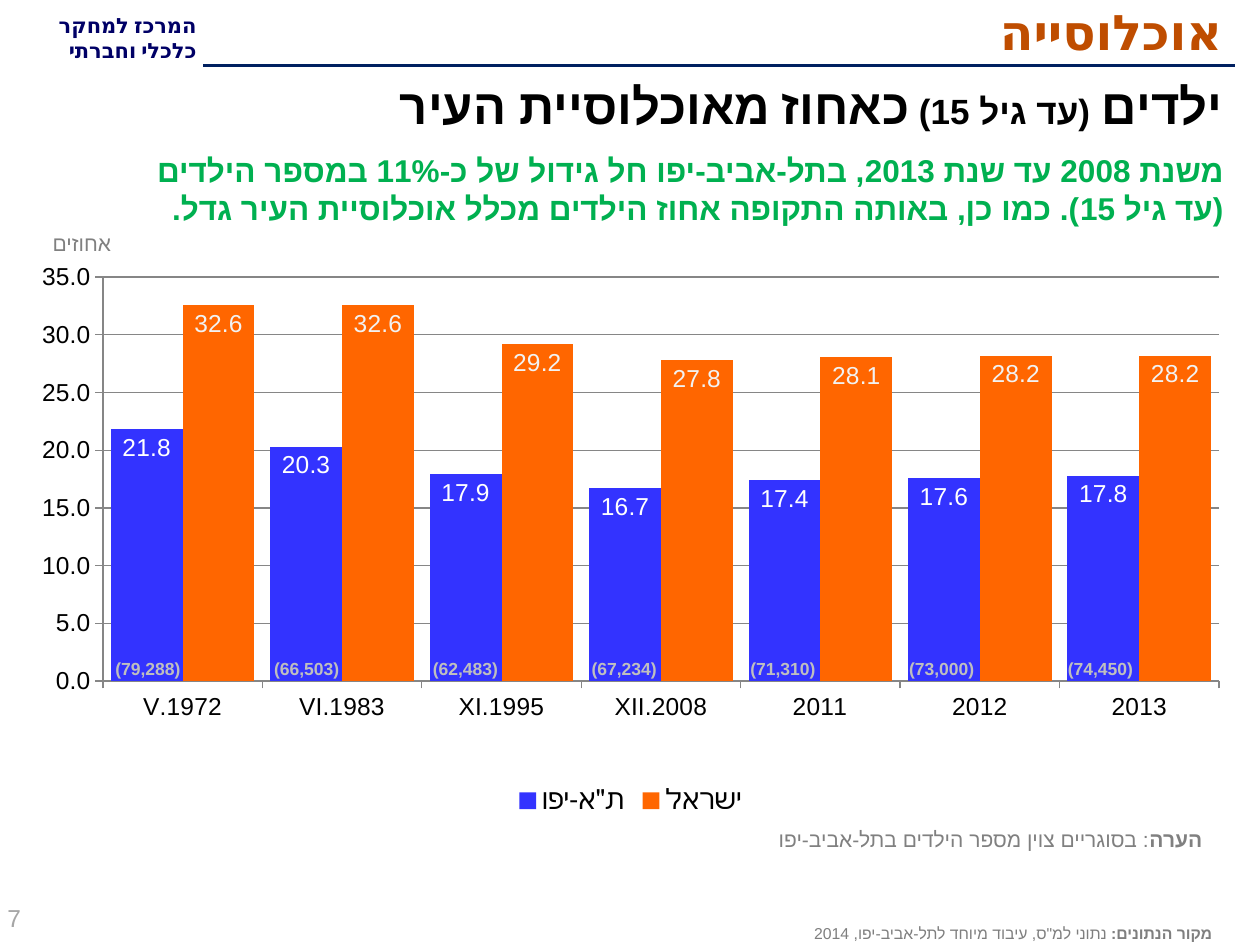
import pptx
import pptx.chart.data
import pptx.dml.color
import pptx.enum.chart
import pptx.enum.lang
import pptx.enum.shapes
import pptx.enum.text
import pptx.oxml
import pptx.oxml.ns
import pptx.util
from pptx.util import Inches

COLORS = {
    "title": "BF4D00", "organization": "000066", "rule": "002060",
    "heading": "000000", "claim": "00B050", "note": "808080",
    "source": "7F7F7F", "page": "A6A6A6", "count": "BFBFBF",
    "city": "3333FF", "city_label": "FFFFFF",
    "country": "FF6600", "country_label": "F2F2F2", "grid": "868686",
}
ALIGN = pptx.enum.text.PP_ALIGN
ANCHOR = pptx.enum.text.MSO_ANCHOR

PERIODS = ["V.1972", "VI.1983", "XI.1995", "XII.2008", "2011", "2012", "2013"]
CITY_SHARE = [21.8, 20.3, 17.9, 16.7, 17.4, 17.6, 17.8]
COUNTRY_SHARE = [32.6, 32.6, 29.2, 27.8, 28.1, 28.2, 28.2]
CHILD_COUNTS = ["(79,288)", "(66,503)", "(62,483)", "(67,234)",
                "(71,310)", "(73,000)", "(74,450)"]


def rgb(name):
    return pptx.dml.color.RGBColor.from_string(COLORS[name])


def write(shape, lines, color, font="Arial", align=ALIGN.RIGHT, anchor=ANCHOR.TOP):
    """Fill a shape with right-to-left lines, each a list of (text, size, bold)."""
    frame = shape.text_frame
    frame.word_wrap = True
    frame.auto_size = pptx.enum.text.MSO_AUTO_SIZE.NONE
    frame.vertical_anchor = anchor
    for number, pieces in enumerate(lines):
        paragraph = frame.add_paragraph() if number else frame.paragraphs[0]
        paragraph.alignment = align
        paragraph.space_before = pptx.util.Pt(0)
        properties = paragraph._p.get_or_add_pPr()
        for key, value in (("rtl", "1"), ("marL", "0"), ("marR", "0"), ("indent", "0")):
            properties.set(key, value)
        properties.append(pptx.oxml.parse_xml(
            f'<a:buNone {pptx.oxml.ns.nsdecls("a")}/>'))
        for text, size, bold in pieces:
            run = paragraph.add_run()
            run.text = text
            run.font.size = pptx.util.Pt(size)
            run.font.bold = bold
            run.font.name = font
            run.font.language_id = pptx.enum.lang.MSO_LANGUAGE_ID.HEBREW
            run.font.color.rgb = rgb(color)
            run._r.get_or_add_rPr().append(pptx.oxml.parse_xml(
                f'<a:cs {pptx.oxml.ns.nsdecls("a")} typeface="{font}"/>'))


def place(shape, left, top, width, height):
    shape.left, shape.top, shape.width, shape.height = left, top, width, height
    return shape


def build_header(slide, left, top, width):
    organization = slide.shapes.add_textbox(
        left - Inches(0.15), top + Inches(0.05), Inches(1.81), Inches(0.51))
    write(organization, [[("המרכז למחקר", 12, True)], [("כלכלי וחברתי", 12, True)]],
          "organization", "Roboto")

    rule_y = top + Inches(0.52)
    rule = slide.shapes.add_connector(
        pptx.enum.shapes.MSO_CONNECTOR.STRAIGHT,
        left + width, rule_y, left + Inches(1.61), rule_y)
    rule.line.color.rgb = rgb("rule")
    rule.line.width = pptx.util.Pt(2.25)
    rule._element.spPr.append(pptx.oxml.parse_xml(
        f'<a:effectLst {pptx.oxml.ns.nsdecls("a")}/>'))

    title = place(slide.shapes.title, left + Inches(1.58), top - Inches(0.03),
                  width - Inches(1.58), Inches(0.55))
    write(title, [[("אוכלוסייה", 28, True)]], "title", "Roboto", anchor=ANCHOR.MIDDLE)


def build_message(slide, left, top, width):
    heading = place(slide.placeholders[1], left, top, width, Inches(0.6))
    write(heading, [[("ילדים", 28, True), (" ", 24, True), ("(עד גיל 15) ", 20, True),
                     ("כאחוז", 28, True), (" ", 24, True),
                     ("מאוכלוסיית העיר", 28, True)]], "heading")
    claim = place(slide.placeholders[3], left + Inches(0.74), top + Inches(0.6),
                  width - Inches(0.73), Inches(0.79))
    write(claim, [[("משנת 2008 עד שנת 2013, בתל-אביב-יפו חל גידול של כ-11% במספר הילדים "
                    "(עד גיל 15). כמו כן, באותה התקופה אחוז הילדים מכלל אוכלוסיית העיר גדל.",
                    18, True)]], "claim")


def style_axes(chart):
    for axis in (chart.category_axis, chart.value_axis):
        axis.major_tick_mark = pptx.enum.chart.XL_TICK_MARK.OUTSIDE
        axis.minor_tick_mark = pptx.enum.chart.XL_TICK_MARK.NONE
        axis.tick_labels.font.size = pptx.util.Pt(14)
        axis.format.line.color.rgb = rgb("grid")
    shares = chart.value_axis
    shares.minimum_scale, shares.maximum_scale, shares.major_unit = 0, 35, 5
    shares.tick_labels.number_format = "0.0"
    shares.tick_labels.number_format_is_linked = False
    shares.major_gridlines.format.line.color.rgb = rgb("grid")


def set_plot_area(chart, x, y, w, h):
    """Fix the inner plot area, in fractions of the chart."""
    plot_area = chart._chartSpace.chart.plotArea
    for old in plot_area.findall(pptx.oxml.ns.qn("c:layout")):
        plot_area.remove(old)
    plot_area.insert(0, pptx.oxml.parse_xml(
        f'<c:layout {pptx.oxml.ns.nsdecls("c")}><c:manualLayout>'
        '<c:layoutTarget val="inner"/><c:xMode val="edge"/><c:yMode val="edge"/>'
        f'<c:x val="{x}"/><c:y val="{y}"/><c:w val="{w}"/><c:h val="{h}"/>'
        '</c:manualLayout></c:layout>'))


def build_chart(slide, left, top, width, height):
    shares = pptx.chart.data.CategoryChartData(number_format="0.0")
    shares.categories = PERIODS
    shares.add_series('ת"א-יפו', CITY_SHARE)
    shares.add_series("ישראל", COUNTRY_SHARE)
    chart = slide.shapes.add_chart(
        pptx.enum.chart.XL_CHART_TYPE.COLUMN_CLUSTERED,
        left, top, width, height, shares).chart
    chart.has_title = False
    chart.font.name = "Arial"
    chart.font.size = pptx.util.Pt(18)
    chart.font.color.rgb = rgb("heading")
    style_axes(chart)
    set_plot_area(chart, 0.066, 0.04, 0.918, 0.714)

    chart.has_legend = True
    chart.legend.position = pptx.enum.chart.XL_LEGEND_POSITION.BOTTOM
    chart.legend.include_in_layout = False
    chart.legend.font.size = pptx.util.Pt(16)

    columns = chart.plots[0]
    columns.gap_width, columns.overlap = 22, 0
    columns.vary_by_categories = False
    for series, region in zip(columns.series, ("city", "country")):
        series.format.fill.solid()
        series.format.fill.fore_color.rgb = rgb(region)
        labels = series.data_labels
        labels.show_value = True
        labels.position = pptx.enum.chart.XL_LABEL_POSITION.INSIDE_END
        labels.number_format = "0.0"
        labels.number_format_is_linked = False
        labels.font.size = pptx.util.Pt(14)
        labels.font.color.rgb = rgb(f"{region}_label")

    for number, count in enumerate(CHILD_COUNTS):
        count_label = slide.shapes.add_textbox(
            left + Inches(0.49 + 1.26 * number), top + Inches(3.15),
            Inches(0.86), Inches(0.27))
        write(count_label, [[(count, 10, True)]], "count")
    unit = slide.shapes.add_textbox(
        left - Inches(0.3), top - Inches(0.24), Inches(1.54), Inches(0.3))
    write(unit, [[("אחוזים", 12, False)]], "note", align=ALIGN.CENTER)


def build_footer(slide, left, top):
    remark = slide.shapes.add_textbox(
        left + Inches(5.85), top, Inches(3.79), Inches(0.3))
    write(remark, [[("הערה", 12, True),
                    (": בסוגריים צוין מספר הילדים בתל-אביב-יפו", 12, False)]], "note")
    source = place(slide.placeholders[2], left + Inches(2.24), top + Inches(0.78),
                   Inches(7.48), Inches(0.24))
    write(source, [[("מקור הנתונים: ", 9, True),
                    ('נתוני למ"ס, עיבוד מיוחד לתל-אביב-יפו, 2014', 9, False)]],
          "source", anchor=ANCHOR.MIDDLE)
    page = slide.shapes.add_textbox(
        left - Inches(0.04), top + Inches(0.55), Inches(2.33), Inches(0.44))
    write(page, [[("7", 14, False)]], "page", align=ALIGN.LEFT, anchor=ANCHOR.MIDDLE)


def main():
    presentation = pptx.Presentation()
    presentation.slide_width, presentation.slide_height = Inches(10), Inches(7.5)
    slide = presentation.slides.add_slide(
        presentation.slide_layouts.get_by_name("Comparison"))
    unused = slide.placeholders[4]._element
    unused.getparent().remove(unused)

    build_header(slide, Inches(0), Inches(0), Inches(9.8))
    build_message(slide, Inches(0.09), Inches(0.55), Inches(9.71))
    build_chart(slide, Inches(0.18), Inches(2.02), Inches(9.65), Inches(4.49))
    build_footer(slide, Inches(0), Inches(6.51))
    presentation.save("out.pptx")


if __name__ == "__main__":
    main()
